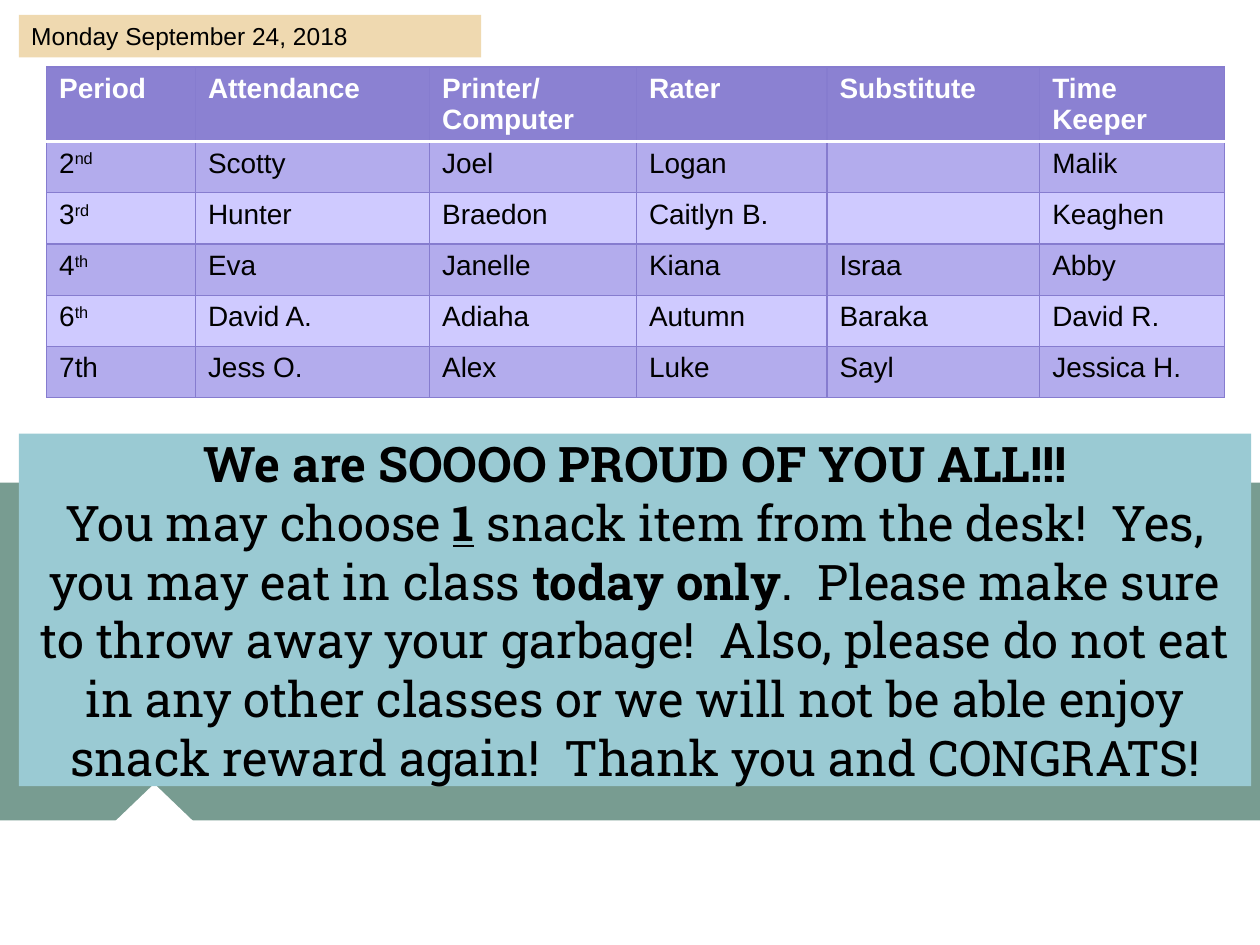
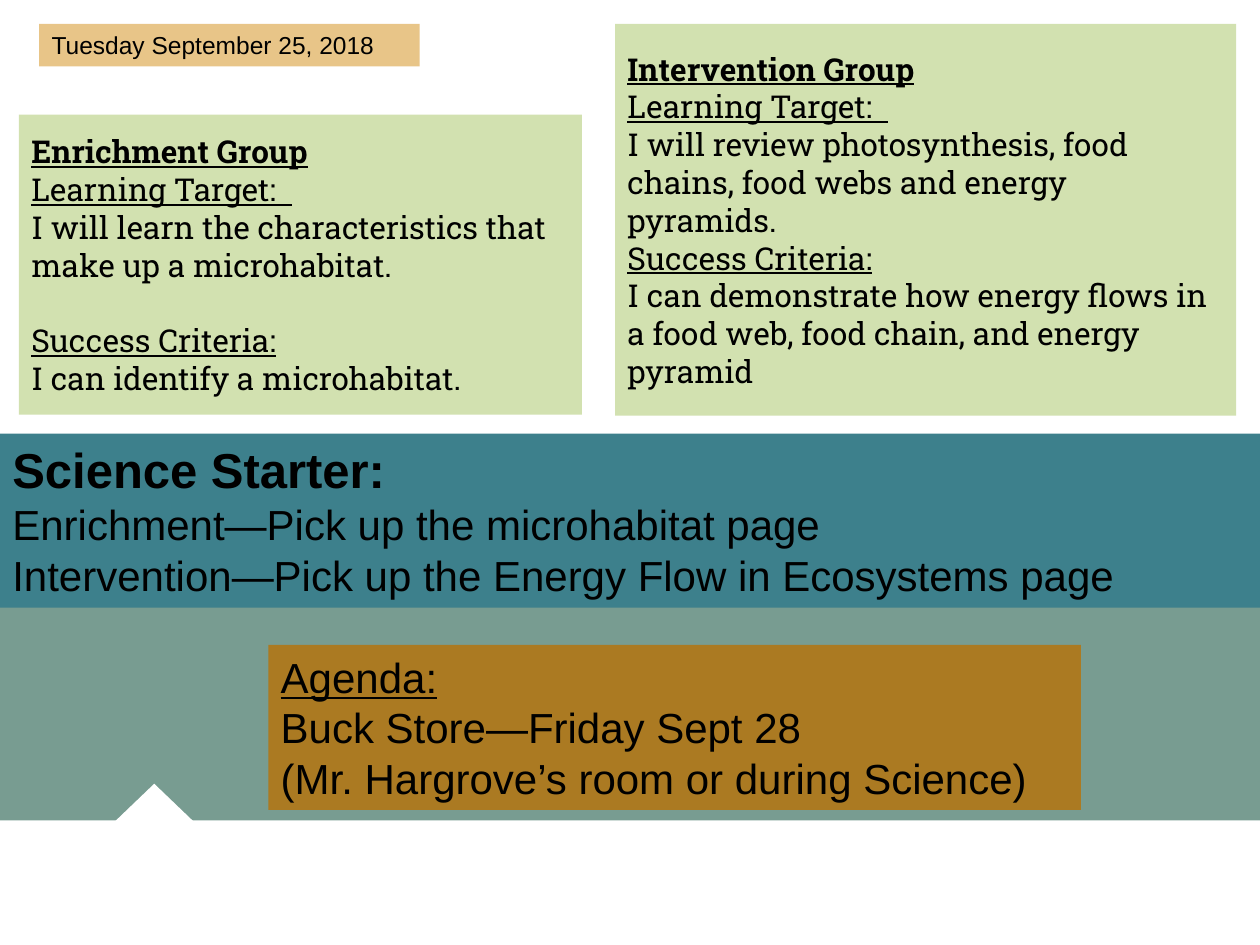
"""Build two daily class slides: jobs and praise, then targets and agenda."""
import lxml.etree
import pptx
import pptx.dml.color
import pptx.enum.shapes
import pptx.enum.text
import pptx.oxml.ns
import pptx.util

Cm = pptx.util.Cm
Pt = pptx.util.Pt
RGBColor = pptx.dml.color.RGBColor
Shape = pptx.enum.shapes.MSO_SHAPE
Align = pptx.enum.text.PP_ALIGN
Anchor = pptx.enum.text.MSO_ANCHOR
qn = pptx.oxml.ns.qn

BLACK = RGBColor(0x00, 0x00, 0x00)
WHITE = RGBColor(0xFF, 0xFF, 0xFF)
PINE = RGBColor(0x00, 0x44, 0x30)
SKY = RGBColor(0x9A, 0xCA, 0xD3)
SAND = RGBColor(0xEF, 0xD9, 0xB0)
TAN = RGBColor(0xE8, 0xC5, 0x88)
LIME = RGBColor(0xD2, 0xE1, 0xB0)
TEAL = RGBColor(0x3D, 0x80, 0x8C)
OCHRE = RGBColor(0xAB, 0x7A, 0x22)
GRID = RGBColor(0x86, 0x7C, 0xCF)
HEAD = RGBColor(0x8B, 0x81, 0xD2)
DARK = RGBColor(0xB3, 0xAC, 0xED)
LIGHT = RGBColor(0xCF, 0xCA, 0xFF)

SANS = "Arial"
SLAB = "Roboto Slab"
WIDE, HIGH = 25.4, 19.05

COLS = [3.0, 4.72, 4.17, 3.84, 4.29, 3.73]
HEADS = ["Period", "Attendance", "Printer/\nComputer", "Rater", "Substitute", "Time\nKeeper"]
JOBS = [
    ["2^nd", "Scotty", "Joel", "Logan", "", "Malik"],
    ["3^rd", "Hunter", "Braedon", "Caitlyn B.", "", "Keaghen"],
    ["4^th", "Eva", "Janelle", "Kiana", "Israa", "Abby"],
    ["6^th", "David A.", "Adiaha", "Autumn", "Baraka", "David R."],
    ["7th", "Jess O.", "Alex", "Luke", "Sayl", "Jessica H."],
]
PRAISE = [
    [("We are SOOOO PROUD OF YOU ALL!!!", "b")],
    [("You may choose ", ""), ("1", "bu"),
     (" snack item from the desk!  Yes, you may eat in class ", ""), ("today only", "b"),
     (".  Please make sure to throw away your garbage!  Also, please do not eat in any "
      "other classes or we will not be able enjoy snack reward again!  Thank you and "
      "CONGRATS!", "")],
]
START = [
    [("Science Starter:", "b")],
    [("Enrichment—Pick up the microhabitat page", "")],
    [("Intervention—Pick up the Energy Flow in Ecosystems page", "")],
]
AGENDA = [
    [("Agenda:", "u")],
    [("Buck Store—Friday Sept 28", "")],
    [("(Mr. Hargrove’s room or during Science)", "")],
]


def goals(name, target, proof):
    """Return the lines of a learning target panel."""
    return [[(name, "bu")], [("Learning Target:  ", "u")], [(target, "")],
            [("Success Criteria:", "u")], [(proof, "")]]


def style(run, size, face, color, marks=""):
    """Format a run; marks hold b for bold, u for underline, ^ for raised."""
    font = run.font
    font.size, font.name = Pt(size), face
    font.color.rgb = color
    font.bold, font.underline = "b" in marks, "u" in marks
    if "^" in marks:
        run._r.get_or_add_rPr().set("baseline", "30000")


def write(frame, lines, size, face, color=BLACK, align=Align.LEFT):
    """Write lines of marked runs into a text frame."""
    for i, line in enumerate(lines):
        para = frame.paragraphs[0] if i == 0 else frame.add_paragraph()
        para.alignment = align
        for text, marks in line:
            run = para.add_run()
            run.text = text
            style(run, size, face, color, marks)


def place(shape, box):
    """Put a shape at a box given in centimetres."""
    shape.left, shape.top, shape.width, shape.height = map(Cm, box)


def block(slide, kind, box, color, alpha=None):
    """Add a plain filled shape, see-through if alpha is given."""
    shape = slide.shapes.add_shape(kind, *map(Cm, box))
    shape.shadow.inherit = False
    shape.line.fill.background()
    shape.fill.solid()
    shape.fill.fore_color.rgb = color
    if alpha:
        tint = shape._element.spPr.find(".//" + qn("a:srgbClr"))
        lxml.etree.SubElement(tint, qn("a:alpha")).set("val", str(alpha * 1000))


def panel(shape, box, color, lines, size, face, align=Align.LEFT, pad=0.13, anchor=Anchor.TOP):
    """Turn a text shape into a filled panel."""
    place(shape, box)
    shape.fill.solid()
    shape.fill.fore_color.rgb = color
    frame = shape.text_frame
    frame.word_wrap = True
    frame.auto_size = pptx.enum.text.MSO_AUTO_SIZE.NONE
    frame.vertical_anchor = anchor
    frame.margin_left = frame.margin_right = Cm(0.25)
    frame.margin_top = frame.margin_bottom = Cm(pad)
    write(frame, lines, size, face, align=align)
    return frame


def note(slide, box, color, lines, size, face=SANS, **more):
    """Add a text box as a panel."""
    return panel(slide.shapes.add_textbox(0, 0, 0, 0), box, color, lines, size, face, **more)


def page(deck):
    """Add a slide with the shared band and notch, and its title on top."""
    slide = deck.slides.add_slide(deck.slide_layouts[5])
    foot = 16.54
    block(slide, Shape.RECTANGLE, (0, 9.73, WIDE, 6.98), PINE, 53)
    block(slide, Shape.RECTANGLE, (0, foot, WIDE, HIGH - foot), WHITE)
    block(slide, Shape.ISOSCELES_TRIANGLE, (2.13, foot - 0.74, 1.96, 0.94), WHITE)
    slide.shapes._spTree.append(slide.shapes.title._element)
    return slide


def edge(cell, side, color, width):
    """Draw one border of a table cell."""
    line = lxml.etree.SubElement(cell._tc.get_or_add_tcPr(), qn("a:ln" + side))
    line.set("w", str(Pt(width)))
    fill = lxml.etree.SubElement(line, qn("a:solidFill"))
    lxml.etree.SubElement(fill, qn("a:srgbClr")).set("val", str(color))


def fill_cell(cell, text, row):
    """Write, border and colour a cell by its row."""
    for side in "LRTB":
        rule = (row, side) in ((0, "B"), (1, "T"))
        edge(cell, side, WHITE if rule else GRID, 2 if rule else 0.75)
    cell.fill.solid()
    cell.fill.fore_color.rgb = HEAD if row == 0 else DARK if row % 2 else LIGHT
    lines = []
    for part in text.split("\n"):
        base, _, top = part.partition("^")
        runs = [(base, "b" if row == 0 else ""), (top, "^")]
        lines.append([run for run in runs if run[0]])
    write(cell.text_frame, lines, 16, SANS, WHITE if row == 0 else BLACK)


def roster(slide, box):
    """Add the table of class jobs."""
    rows = [HEADS] + JOBS
    table = slide.shapes.add_table(len(rows), len(COLS), *map(Cm, box)).table
    for col, width in zip(table.columns, COLS):
        col.width = Cm(width)
    for r, texts in enumerate(rows):
        table.rows[r].height = Cm(1.03 if r else 1.5)
        for c, text in enumerate(texts):
            fill_cell(table.cell(r, c), text, r)


def monday(deck):
    """Build the slide of jobs and praise."""
    slide = page(deck)
    panel(slide.shapes.title, (0.38, 8.74, 24.84, 7.11), SKY, PRAISE, 28, SLAB,
          align=Align.CENTER, pad=0.25, anchor=Anchor.MIDDLE)
    roster(slide, (0.94, 1.35, sum(COLS), 6.65))
    note(slide, (0.38, 0.3, 9.32, 0.86), SAND, [[("Monday September 24, 2018", "")]], 14)


def tuesday(deck):
    """Build the slide of targets, starter and agenda."""
    slide = page(deck)
    look = {"pad": 0.25, "anchor": Anchor.MIDDLE}
    enrich = goals("Enrichment Group",
                   "I will learn the characteristics that make up a microhabitat.",
                   "I can identify a microhabitat.")
    frame = panel(slide.shapes.title, (0.38, 2.31, 11.35, 6.05), LIME, enrich, 18, SLAB, **look)
    frame.paragraphs[3].space_before = Pt(21.6)
    note(slide, (0.79, 0.48, 7.67, 0.86), TAN, [[("Tuesday September 25, 2018", "")]], 14)
    help_lines = goals("Intervention Group",
                       "I will review photosynthesis, food chains, food webs and energy pyramids.",
                       "I can demonstrate how energy flows in a food web, food chain, "
                       "and energy pyramid")
    note(slide, (12.4, 0.48, 12.52, 7.9), LIME, help_lines, 18, SLAB, **look)
    frame = note(slide, (0, 8.74, WIDE, 3.51), TEAL, START, 24)
    frame.paragraphs[0].runs[0].font.size = Pt(28)
    note(slide, (5.41, 13, 16.38, 3.33), OCHRE, AGENDA, 24)


def main():
    """Build and save the deck."""
    deck = pptx.Presentation()
    deck.slide_width, deck.slide_height = Cm(WIDE), Cm(HIGH)
    monday(deck)
    tuesday(deck)
    deck.save("out.pptx")


if __name__ == "__main__":
    main()
